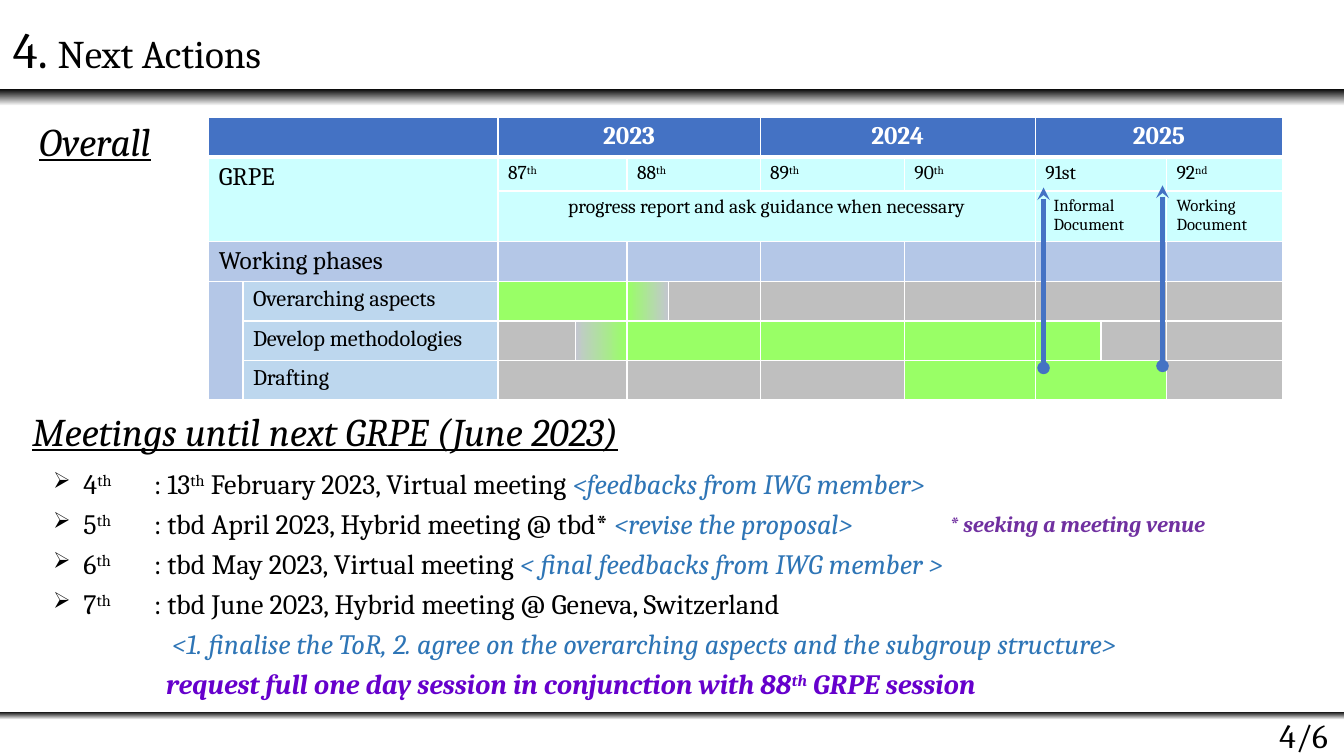
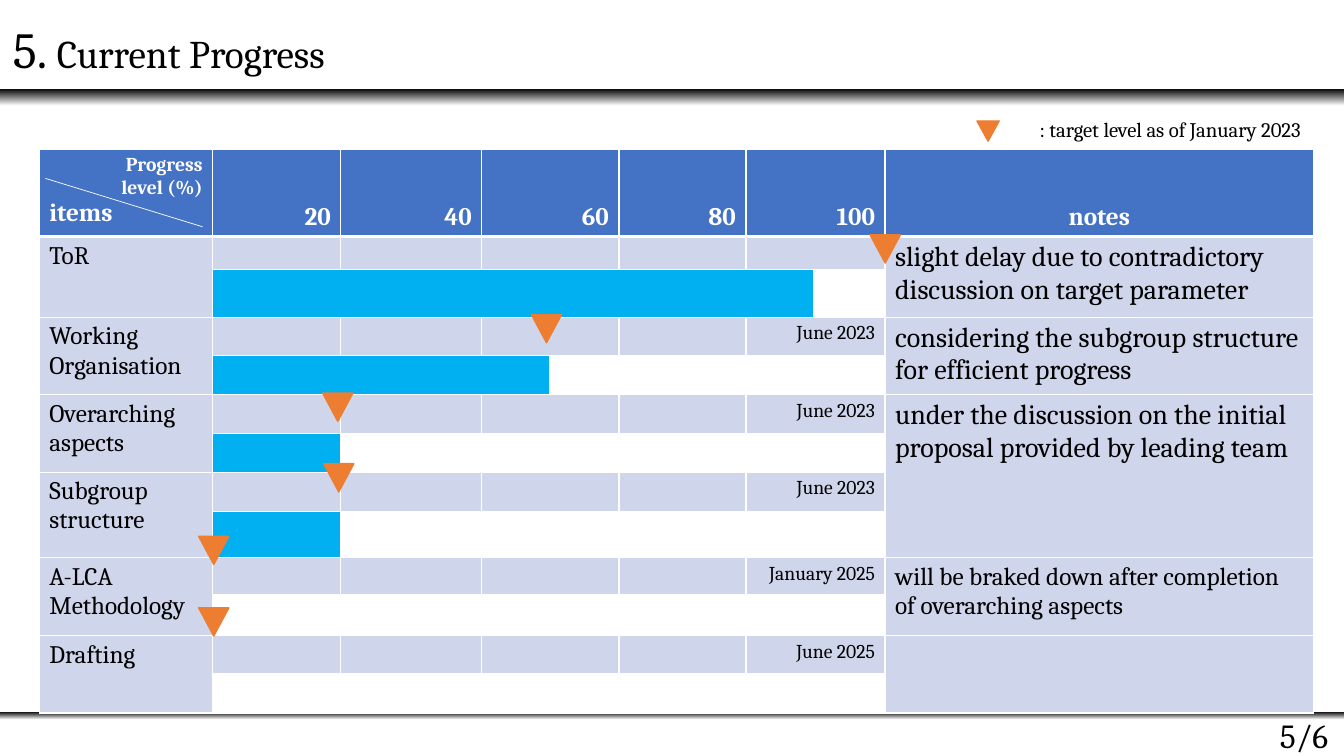
from collections import namedtuple
from dataclasses import dataclass

from lxml import etree
from pptx import Presentation
from pptx import util as u
from pptx.dml.color import RGBColor
from pptx.enum import shapes, text
from pptx.oxml import ns

Box = namedtuple("Box", "left top width height")


@dataclass(frozen=True)
class Theme:
    """Colours, font and type sizes of the deck."""

    font: str = "Cambria"
    black: str = "000000"
    white: str = "FFFFFF"
    header: str = "4472C4"
    cyan: str = "CCFFFF"
    phase: str = "B4C7E7"
    task: str = "BDD7EE"
    active: str = "99FF66"
    fade: str = "C3C6CF"
    idle: str = "BFBFBF"
    lane: str = "CFD5EA"
    bar: str = "00B0F0"
    marker: str = "ED7D31"
    comment: str = "2E75B6"
    request: str = "6600CC"
    venue: str = "7030A0"
    number: float = 36
    title: float = 28
    page: float = 24
    body: float = 20
    cell: float = 18
    task_size: float = 16
    legend: float = 14.8
    small: float = 14
    tiny: float = 12


THEME = Theme()
LEFT, CENTER, RIGHT = text.PP_ALIGN.LEFT, text.PP_ALIGN.CENTER, text.PP_ALIGN.RIGHT
BOTTOM = text.MSO_ANCHOR.BOTTOM
COMMENT = {"color": THEME.comment, "italic": True}
HEADING = {"size": THEME.title, "italic": True, "underline": True}
RAISED = {"raised": True}


def assign(target, **values):
    """Set attributes of an object from format values."""
    for name, value in values.items():
        setattr(target, name, value)


def inches(*lengths):
    """Turn numbers into lengths."""
    return [u.Inches(length) for length in lengths]


def add_node(parent, tag, **attributes):
    """Append a drawing element to a parent."""
    return etree.SubElement(parent, ns.qn(tag), attributes)


def write_span(para, words, size=THEME.cell, color=THEME.black, raised=False, **style):
    """Add one run of formatted text."""
    span = para.add_run()
    span.text = words
    assign(span.font, name=THEME.font, size=u.Pt(size), **style)
    span.font.color.rgb = RGBColor.from_string(color)
    if raised:
        span.font._element.set("baseline", "30000")


def write(frame, lines, align=LEFT, gap=0, **style):
    """Fill a text frame with lines made of plain or styled spans."""
    for index, line in enumerate(lines):
        para = frame.add_paragraph() if index else frame.paragraphs[0]
        para.alignment = align
        if index and gap:
            para.space_before = u.Pt(gap)
        for span in [line] if isinstance(line, str) else line:
            words, extra = (span, {}) if isinstance(span, str) else span
            write_span(para, words, **{**style, **extra})


def add_text(page, box, lines, anchor=text.MSO_ANCHOR.TOP, **style):
    """Place a wrapped text box."""
    frame = page.shapes.add_textbox(*inches(*box)).text_frame
    assign(frame, word_wrap=True, vertical_anchor=anchor)
    write(frame, lines, **style)
    return frame


def paint(fill, shade):
    """Fill with one colour, or a gradient for a pair of colours."""
    if isinstance(shade, str):
        fill.solid()
        fill.fore_color.rgb = RGBColor.from_string(shade)
        return
    fill.gradient()
    fill.gradient_angle = 0
    for stop, position, color in zip(fill.gradient_stops, (0, 1), shade):
        stop.position = position
        stop.color.rgb = RGBColor.from_string(color)


def add_band(page, box):
    """Draw a rule that fades downwards."""
    band = page.shapes.add_shape(shapes.MSO_SHAPE.RECTANGLE, *inches(*box))
    band.shadow.inherit = False
    band.line.fill.background()
    paint(band.fill, (THEME.black, THEME.white))
    band.fill.gradient_angle = 270


def add_frame(deck, number, title, total=6):
    """Start a page with its title, bands and page number."""
    page = deck.slides.add_slide(deck.slide_layouts[6])
    add_band(page, Box(0, 7.06, 13.33, 0.08))
    add_band(page, Box(0, 0.88, 13.33, 0.17))
    heading = [(f"{number}. ", {"size": THEME.number}), title]
    add_text(page, Box(0.03, 0.13, 13.3, 0.7), [heading], BOTTOM, size=THEME.title)
    add_text(page, Box(11.77, 6.87, 1.5, 0.67), [f"{number}/{total}"], BOTTOM,
             align=RIGHT, size=THEME.page)
    return page


def add_line(page, start, end, color, width, head=None, tail=None):
    """Draw a straight line with optional ends."""
    line = page.shapes.add_connector(shapes.MSO_CONNECTOR.STRAIGHT, *inches(*start, *end))
    line.line.color.rgb = RGBColor.from_string(color)
    line.line.width = u.Pt(width)
    outline = line.line._get_or_add_ln()
    for tag, kind in (("a:headEnd", head), ("a:tailEnd", tail)):
        if kind:
            add_node(outline, tag, type=kind)
    add_node(line._element.spPr, "a:effectLst")


def add_marker(page, left, top, width=0.3, height=0.28):
    """Draw a triangle that points down."""
    marker = page.shapes.add_shape(
        shapes.MSO_SHAPE.ISOSCELES_TRIANGLE, *inches(left, top, width, height))
    marker.rotation = 180
    marker.shadow.inherit = False
    paint(marker.fill, THEME.marker)
    marker.line.color.rgb = RGBColor.from_string(THEME.marker)
    marker.line.width = u.Pt(1)


def add_grid(page, box, widths, heights):
    """Add a plain table with white borders and a heavy rule under its header."""
    table = page.shapes.add_table(len(heights), len(widths), *inches(*box)).table
    assign(table, first_row=False, horz_banding=False)
    for column, width in zip(table.columns, widths):
        column.width = u.Inches(width)
    for row, height in zip(table.rows, heights):
        row.height = u.Inches(height)
    for index, row in enumerate(table.rows):
        for cell in row.cells:
            assign(cell, margin_top=0, margin_bottom=0)
            for side in "LRTB":
                heavy = (index, side) in ((0, "B"), (1, "T"))
                border = add_node(cell._tc.get_or_add_tcPr(), f"a:ln{side}",
                                  w=str(u.Pt(3 if heavy else 1)))
                add_node(add_node(border, "a:solidFill"), "a:srgbClr", val=THEME.white)
    return table


def fill_cell(table, row, column, shade, lines=(), rows=1, columns=1,
              anchor=text.MSO_ANCHOR.TOP, inset=0.1, **style):
    """Merge, paint and write one cell."""
    for down in range(rows):
        for across in range(columns):
            paint(table.cell(row + down, column + across).fill, shade)
    cell = table.cell(row, column)
    if rows * columns > 1:
        cell.merge(table.cell(row + rows - 1, column + columns - 1))
    if lines:
        assign(cell, margin_top=u.Inches(0.05), margin_bottom=u.Inches(0.05),
               margin_left=u.Inches(inset), vertical_anchor=anchor)
        write(cell.text_frame, lines, **style)
    return cell


def fill_lane(table, row, column, parts):
    """Paint neighbouring cells from pairs of column count and colour."""
    for columns, shade in parts:
        fill_cell(table, row, column, shade, columns=columns)
        column += columns


def add_schedule(page, box):
    """Draw the timetable of phases with its two document arrows."""
    table = add_grid(page, box,
                     (0.34, 2.53, 0.77, 0.51, 0.41, 0.91, 1.43, 1.3, 0.65, 0.65, 1.15),
                     (0.39, 0.32, 0.49, 0.39, 0.39, 0.39, 0.39))
    fill_cell(table, 0, 0, THEME.header, columns=2)
    for year, column, columns in (("2023", 2, 4), ("2024", 6, 2), ("2025", 8, 3)):
        fill_cell(table, 0, column, THEME.header, [year], columns=columns,
                  align=CENTER, color=THEME.white, bold=True)
    fill_cell(table, 1, 0, THEME.cyan, ["GRPE"], rows=2, columns=2)
    sessions = (("87", "th", 2), ("88", "th", 2), ("89", "th", 1), ("90", "th", 1),
                ("91st", "", 2), ("92", "nd", 1))
    column = 2
    for number, ending, columns in sessions:
        line = [number, (ending, RAISED)] if ending else number
        fill_cell(table, 1, column, THEME.cyan, [line], columns=columns, size=THEME.small)
        column += columns
    fill_cell(table, 2, 2, THEME.cyan, ["progress report and ask guidance when necessary"],
              columns=6, align=CENTER, size=THEME.small)
    fill_cell(table, 2, 8, THEME.cyan, ["Informal", "Document"], columns=2,
              inset=0.18, size=THEME.tiny)
    fill_cell(table, 2, 10, THEME.cyan, ["Working", "Document"], size=THEME.tiny)
    fill_cell(table, 3, 0, THEME.phase, ["Working phases"], columns=2)
    fill_lane(table, 3, 2, [(columns, THEME.phase) for *_, columns in sessions])
    fill_cell(table, 4, 0, THEME.phase, rows=3)
    on, off, fade = THEME.active, THEME.idle, THEME.fade
    tasks = (
        ("Overarching aspects",
         ((2, on), (1, (on, fade)), (1, off), (1, off), (1, off), (2, off), (1, off))),
        ("Develop methodologies",
         ((1, off), (1, (fade, on)), (2, on), (1, on), (1, on), (1, on), (1, off), (1, off))),
        ("Drafting", ((2, off), (2, off), (1, off), (1, on), (2, on), (1, off))),
    )
    for row, (name, parts) in enumerate(tasks, 4):
        fill_cell(table, row, 1, THEME.task, [name], size=THEME.task_size)
        fill_lane(table, row, 2, parts)
    for across, down in ((8.28, 2.49), (9.46, 2.47)):
        x, y = box.left + across, box.top + down
        add_line(page, (x, y), (x, y - 1.79), THEME.header, 3, "oval", "stealth")


def add_meetings(page, box):
    """List the coming meetings under their heading."""
    add_text(page, box, ["Meetings until next GRPE (June 2023)"], **HEADING)
    meetings = [
        ["4", ("th", RAISED), "\t: 13", ("th", RAISED), " February 2023, Virtual meeting ",
         ("<feedbacks from IWG member>", COMMENT)],
        ["5", ("th", RAISED), "\t: tbd April 2023, Hybrid meeting @ tbd* ",
         ("<revise the proposal>", COMMENT)],
        ["6", ("th", RAISED), "\t: tbd May 2023, Virtual meeting ",
         ("< final feedbacks from IWG member >", COMMENT)],
        ["7", ("th", RAISED), "\t: tbd June 2023, Hybrid meeting @ Geneva, Switzerland"],
    ]
    strong = {"color": THEME.request, "bold": True, "italic": True}
    details = [
        [("<1. finalise the ToR, 2. agree on the overarching aspects and the subgroup structure>",
          COMMENT)],
        [("request full one day session in conjunction with 88", strong),
         ("th", {**strong, **RAISED}), (" GRPE session", strong)],
    ]
    frame = add_text(page, Box(box.left + 0.21, box.top + 0.59, 12.76, 2.65),
                     meetings + details, size=THEME.body, gap=4.6)
    indents = [(0.3, -0.3)] * len(meetings) + [(1.18, 0), (1.12, 0)]
    for para, (left, first) in zip(frame.paragraphs, indents):
        layout = para._p.get_or_add_pPr()
        layout.set("marL", str(u.Inches(left)))
        layout.set("indent", str(u.Inches(first)))
        if first:
            add_node(add_node(layout, "a:buClr"), "a:srgbClr", val=THEME.black)
            add_node(layout, "a:buSzPct", val="80000")
            add_node(layout, "a:buChar", char="➢")
    add_text(page, Box(box.left + 9.1, box.top + 1.02, 3.37, 0.49),
             ["* seeking a meeting venue"], size=THEME.task_size, color=THEME.venue,
             bold=True, italic=True)


def add_progress(page, box):
    """Draw the progress table with its bars and target markers."""
    table = add_grid(page, box, (1.72, 1.27, 1.4, 0.67, 0.69, 1.26, 0.67, 0.71, 4.25),
                     (0.82, 0.33, 0.47, 0.38, 0.36, 0.39, 0.38, 0.39, 0.46, 0.37, 0.4,
                      0.38, 0.39))
    label = {"color": THEME.white, "bold": True}
    small = {"size": THEME.small}
    corner = fill_cell(table, 0, 0, THEME.header,
                       [[("Progress", small)], [("level (%)", small)], "items"],
                       align=RIGHT, **label)
    corner.text_frame.paragraphs[2].alignment = LEFT
    lanes = ((1, 1), (2, 1), (3, 2), (5, 1), (6, 2))
    for level, (column, columns) in zip(range(20, 101, 20), lanes):
        fill_cell(table, 0, column, THEME.header, [str(level)], columns=columns,
                  anchor=BOTTOM, align=RIGHT, **label)
    fill_cell(table, 0, 8, THEME.header, ["notes"], anchor=BOTTOM, align=CENTER, **label)
    items = (
        (["ToR"], "", 6),
        (["Working", "Organisation"], "June 2023", 3),
        (["Overarching aspects"], "June 2023", 1),
        (["Subgroup structure"], "June 2023", 1),
        (["A-LCA Methodology"], "January 2025", 0),
        (["Drafting"], "June 2025", 0),
    )
    for row, (name, due, done) in zip(range(1, 13, 2), items):
        fill_cell(table, row, 0, THEME.lane, name, rows=2)
        fill_lane(table, row, 1, [(columns, THEME.lane) for _, columns in lanes[:-1]])
        fill_cell(table, row, 6, THEME.lane, [due] if due else (), columns=2,
                  align=RIGHT, size=THEME.small)
        parts = ((done, THEME.bar), (7 - done, THEME.white))
        fill_lane(table, row + 1, 1, [part for part in parts if part[0]])
    notes = (
        (1, 2, "slight delay due to contradictory discussion on target parameter", THEME.body),
        (3, 2, "considering the subgroup structure for efficient progress", THEME.body),
        (5, 4, "under the discussion on the initial proposal provided by leading team",
         THEME.body),
        (9, 2, "will be braked down after completion of overarching aspects", THEME.cell),
        (11, 2, "", THEME.cell),
    )
    for row, rows, note, size in notes:
        fill_cell(table, row, 8, THEME.lane, [note] if note else (), rows=rows, size=size)
    add_line(page, (box.left + 0.06, box.top + 0.29), (box.left + 1.62, box.top + 0.77),
             THEME.white, 0.5)
    for across, down in ((8.24, 0.85), (4.88, 1.64), (2.81, 2.42), (2.82, 3.12),
                         (1.58, 3.84), (1.58, 4.55)):
        add_marker(page, box.left + across, box.top + down)


def add_legend(page, box):
    """Explain the target marker."""
    add_marker(page, box.left - 0.02, box.top + 0.09, 0.22, 0.2)
    add_text(page, box, [": target level as of January 2023"], align=RIGHT, size=THEME.legend)


def main():
    """Build and save the deck."""
    deck = Presentation()
    assign(deck, slide_width=u.Inches(13.33), slide_height=u.Inches(7.5))
    page = add_frame(deck, 4, "Next Actions")
    add_text(page, Box(0.29, 1.11, 2.39, 0.62), ["Overall"], **HEADING)
    add_meetings(page, Box(0.22, 3.99, 12.43, 2.99))
    add_schedule(page, Box(2.07, 1.16, 10.65, 2.76))
    page = add_frame(deck, 5, "Current Progress")
    add_progress(page, Box(0.39, 1.48, 12.66, 5.52))
    add_legend(page, Box(9.71, 1.11, 3.29, 0.36))
    deck.save("out.pptx")


if __name__ == "__main__":
    main()
